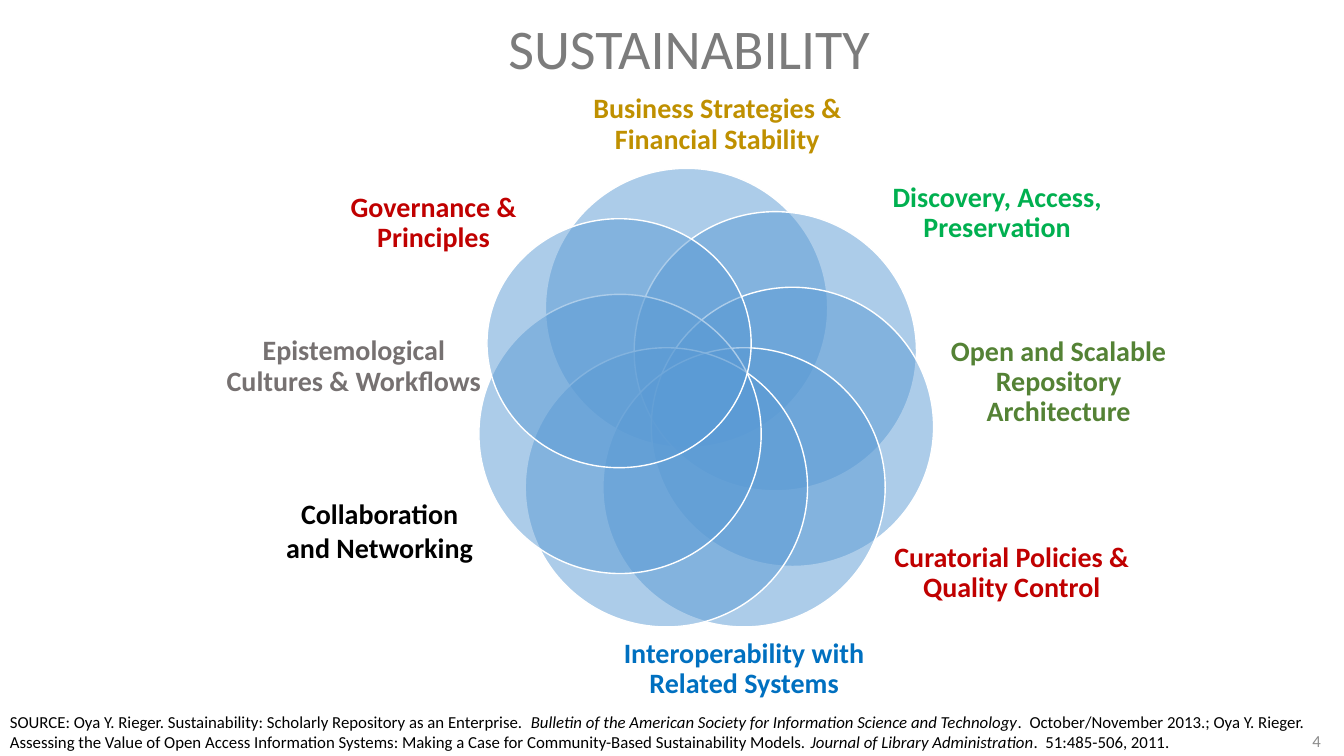
import pptx
import pptx.dml.color
import pptx.enum.shapes
import pptx.enum.text
import pptx.oxml.ns
import pptx.util
from lxml import etree
from pptx.util import Inches

FONT = "Calibri"
ALIGN = pptx.enum.text.PP_ALIGN
ANCHOR = pptx.enum.text.MSO_ANCHOR

CIRCLE_SIZE = (2.8, 2.77)
CIRCLES = [
    (5.41, 1.67, *CIRCLE_SIZE),
    (6.29, 2.1, *CIRCLE_SIZE),
    (6.46, 2.85, *CIRCLE_SIZE),
    (5.98, 3.45, *CIRCLE_SIZE),
    (5.21, 3.45, *CIRCLE_SIZE),
    (4.75, 2.92, *CIRCLE_SIZE),
    (4.83, 2.17, 2.62, 2.47),
]
LABELS = [
    ("Open and Scalable Repository Architecture", "548235", (9.15, 3.07, 2.7, 1.45)),
    ("Discovery, Access, Preservation", "00B050", (8.61, 1.32, 2.56, 1.59)),
    ("Curatorial Policies & Quality Control", "C00000", (8.78, 4.84, 2.51, 1.7)),
    ("Interoperability with Related Systems", "0070C0", (6.03, 5.86, 2.7, 1.56)),
    ("Epistemological Cultures & Workflows", "767171", (2.16, 2.86, 2.7, 1.56)),
    ("Business Strategies & Financial Stability", "BF9000", (5.86, 0.39, 2.51, 1.7)),
    ("Governance & Principles", "C00000", (3.02, 1.42, 2.56, 1.59)),
]
SOURCE_RUNS = [
    ("SOURCE: Oya Y. Rieger. Sustainability: Scholarly Repository as an Enterprise.  ", False),
    ("Bulletin of the American Society for Information Science and Technology", True),
    (".  October/November 2013.; Oya Y. Rieger. Assessing the Value of Open Access "
     "Information Systems: Making a Case for Community-Based Sustainability Models. ", False),
    ("Journal of Library Administration", True),
    (".  51:485-506, 2011.", False),
]


def rgb(color):
    """Turn a hex string into a colour."""
    return pptx.dml.color.RGBColor.from_string(color)


def add_run(paragraph, text, size, color, bold=False, italic=False):
    """Append one formatted run to a paragraph."""
    run = paragraph.add_run()
    run.text = text
    run.font.name = FONT
    run.font.size = pptx.util.Pt(size)
    run.font.bold = bold
    run.font.italic = italic
    run.font.color.rgb = rgb(color)


def add_text_box(slide, box, align, anchor=ANCHOR.TOP):
    """Add a wrapping text box and return its text frame."""
    frame = slide.shapes.add_textbox(*map(Inches, box)).text_frame
    frame.word_wrap = True
    frame.vertical_anchor = anchor
    frame.paragraphs[0].alignment = align
    return frame


def add_title(slide, text, box):
    """Move and format the title placeholder."""
    title = slide.shapes.title
    title.left, title.top, title.width, title.height = map(Inches, box)
    frame = title.text_frame
    frame.auto_size = pptx.enum.text.MSO_AUTO_SIZE.NONE
    frame.vertical_anchor = ANCHOR.TOP
    frame.paragraphs[0].alignment = ALIGN.CENTER
    add_run(frame.paragraphs[0], text, 40, "7C7C7C")


def add_circle(slide, box):
    """Add one half-transparent circle of the Venn diagram."""
    circle = slide.shapes.add_shape(
        pptx.enum.shapes.MSO_SHAPE.OVAL, *map(Inches, box))
    circle.shadow.inherit = False
    circle.fill.solid()
    circle.fill.fore_color.rgb = rgb("5B9BD5")
    circle.line.color.rgb = rgb("FFFFFF")
    circle.line.width = pptx.util.Pt(1)
    fill_color = circle.fill._xPr.find(".//" + pptx.oxml.ns.qn("a:srgbClr"))
    etree.SubElement(fill_color, pptx.oxml.ns.qn("a:alpha"), val="50000")


def add_label(slide, text, color, box):
    """Add a bold centred label beside the diagram."""
    frame = add_text_box(slide, box, ALIGN.CENTER, ANCHOR.MIDDLE)
    frame.margin_left = frame.margin_right = 0
    frame.margin_top = frame.margin_bottom = 0
    frame.paragraphs[0].line_spacing = 0.9
    add_run(frame.paragraphs[0], text, 20, color, bold=True)


def main():
    """Build the sustainability slide and save it."""
    presentation = pptx.Presentation()
    presentation.slide_width = Inches(13.33)
    presentation.slide_height = Inches(7.5)
    slide = presentation.slides.add_slide(presentation.slide_layouts[5])

    add_title(slide, "SUSTAINABILITY", (2.42, 0.08, 8.83, 0.77))
    for box in CIRCLES:
        add_circle(slide, box)
    for text, color, box in LABELS:
        add_label(slide, text, color, box)

    page_number = add_text_box(slide, (12.4, 7.2, 0.8, 0.3), ALIGN.RIGHT, ANCHOR.MIDDLE)
    add_run(page_number.paragraphs[0], "4", 12, "8C8C8C")

    collaboration = add_text_box(slide, (2.67, 4.88, 2.19, 0.77), ALIGN.CENTER)
    add_run(collaboration.paragraphs[0], "Collaboration and Networking", 20, "000000", bold=True)

    source = add_text_box(slide, (0, 7.01, 13.33, 0.49), ALIGN.LEFT)
    for text, italic in SOURCE_RUNS:
        add_run(source.paragraphs[0], text, 12, "000000", italic=italic)

    presentation.save("out.pptx")


if __name__ == "__main__":
    main()
